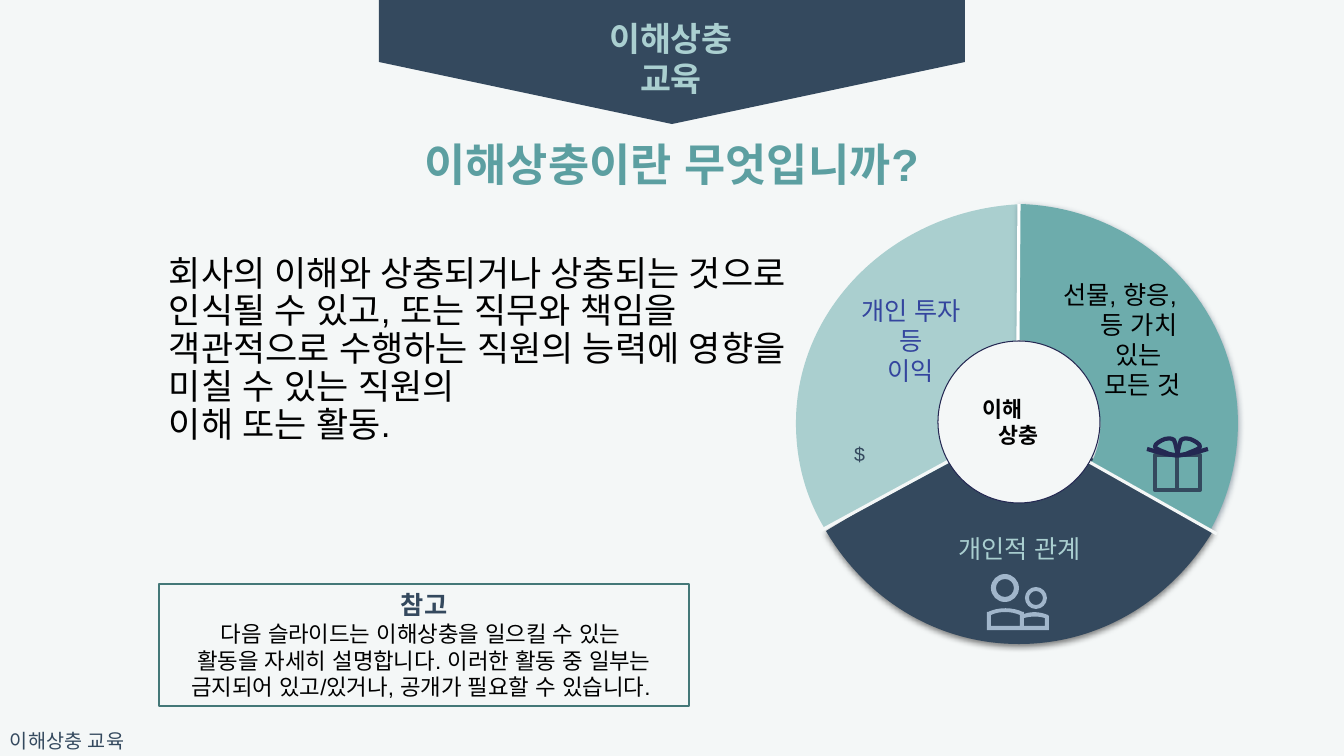
from pptx import Presentation, util as u
from pptx.dml.color import RGBColor
from pptx.enum import shapes, text
from pptx.oxml import parse_xml
from pptx.oxml.ns import nsdecls

PX = 914400 / 100.8
SIZE = (1344, 756)
PAPER, NAVY, TEAL, PALE, BLACK = "F4F7F7", "34495E", "5C9FA1", "AACFD0", "000000"
INDIGO, STEEL = "242852", "A1B6CB"
CENTER, LEFT = text.PP_ALIGN.CENTER, text.PP_ALIGN.LEFT
MIDDLE, TOP = text.MSO_ANCHOR.MIDDLE, text.MSO_ANCHOR.TOP
INSETS = (10, 5, 10, 5)

# Paragraph: (text, size, colour, bold)
BANNER = [("이해상충", 24, PALE, True), ("교육", 24, PALE, True)]
HEADING = [("이해상충이란 무엇입니까?", 32, TEAL, True)]
DEFINITION = [("회사의 이해와 상충되거나 상충되는 것으로 인식될 수 있고, 또는 직무와 책임을 "
               "객관적으로 수행하는 직원의 능력에 영향을 미칠 수 있는 직원의 \n이해 또는 활동.",
               25, BLACK, False)]
NOTE = [("참고", 18, NAVY, True),
        ("다음 슬라이드는 이해상충을 일으킬 수 있는 \n활동을 자세히 설명합니다. 이러한 활동 중 일부는 "
         "금지되어 있고/있거나, 공개가 필요할 수 있습니다. ", 16, BLACK, False)]
FOOTER = [("이해상충 교육", 14, NAVY, False)]
DOLLAR = [("$", 14, NAVY, False)]
HUB = [("이해", 15.5, BLACK, True), ("상충", 15.5, BLACK, True)]
RELATIONS = [("개인적 관계", 18, PALE, False)]
INVESTMENTS = [(line, 18, "34459E", False) for line in ("개인 투자", "등", "이익")]
GIFTS = [("선물, 향응, \n등 가치 \n있는 \n모든 것", 18, BLACK, False)]


def straight(*corners):
    """Corners as curve triples, so that straight edges join a chain of curves."""
    return [corner for corner in corners for _ in range(3)]


def circle(x, y, r):
    k = r * 0.55
    return [(x, y - r), (x + k, y - r), (x + r, y - k), (x + r, y),
            (x + r, y + k), (x + k, y + r), (x, y + r),
            (x - k, y + r), (x - r, y + k), (x - r, y),
            (x - r, y - k), (x - k, y - r), (x, y - r)]


# Curve chains: first point, then (control, control, end) triples
RELATIONS_EDGE = [
    (1042, 496), (1019, 502), (996, 499), (976, 487), (964, 480), (954, 470), (947, 458),
    *straight((826, 531)), (866, 599), (937, 644), (1019, 644),
    (1101, 644), (1172, 599), (1213, 531), *straight((1092, 458)),
    (1080, 476), (1062, 490), (1042, 496)]
INVESTMENTS_EDGE = [
    (954, 382), (966, 362), (985, 348), (1008, 342), (1015, 341), (1020, 340), (1026, 340),
    *straight((1026, 204)), (899, 207), (796, 304), (796, 423),
    (796, 462), (806, 498), (825, 529), *straight((951, 462)),
    (937, 436), (937, 407), (954, 382)]
GIFTS_EDGE = [
    (1097, 402), (1103, 422), (1101, 443), (1092, 462), *straight((1211, 529)),
    (1228, 498), (1238, 462), (1238, 423), (1238, 304), (1140, 207), (1019, 204),
    *straight((1019, 340)), (1032, 341), (1045, 344), (1056, 350),
    (1077, 362), (1092, 379), (1097, 402)]
# Ring sector: (edge, fill, shadow, insets, paragraphs)
SECTORS = [
    (RELATIONS_EDGE, NAVY, BLACK, (50, 75, 50, 5), RELATIONS),
    (INVESTMENTS_EDGE, "AACFCF", None, (20, 91, 20, 5), INVESTMENTS),
    (GIFTS_EDGE, "6DACAC", NAVY, (0, 75, 10, 0), GIFTS),
]
SPOKES = [((980, 444), (809, 537), PAPER), ((1084, 459), (1217, 534), PAPER),
          ((1019, 204), (1018, 342), "FFFFFF")]
BOW_SPAN = 1147 + 1208
BOW = [(1147, 449), (1151, 450), (1166, 455), (1173, 455), (1179, 456), (1181, 455),
       (1186, 454), (1190, 452), (1200, 449), (1200, 447), (1201, 444), (1193, 440),
       (1190, 439), (1187, 438), (1184, 438), (1181, 440), (1179, 444), (1178, 453), (1177, 455)]
PEOPLE = [
    circle(1005, 588, 9), circle(1005, 588, 14), circle(1036, 598, 7), circle(1036, 598, 11),
    [(1045, 626), *straight((1024, 626), (1024, 618)), (1031, 616), (1039, 616), (1045, 618),
     *straight((1045, 626))],
    [(1020, 626), *straight((991, 626), (991, 615)), (999, 611), (1011, 611), (1020, 615),
     *straight((1020, 626))],
    [(1048, 615), (1041, 612), (1032, 611), (1024, 614), *straight((1024, 612), (1023, 612)),
     (1013, 607), (998, 607), (988, 612),
     *straight((987, 612), (987, 630), (1049, 630), (1049, 616), (1048, 615))],
]

prs = Presentation()
prs.slide_width, prs.slide_height = (u.Emu(round(n * PX)) for n in SIZE)
slide = prs.slides.add_slide(prs.slide_layouts[6])


def px(*lengths):
    return [u.Emu(round(n * PX)) for n in lengths]


def rgb(value):
    return RGBColor.from_string(value)


def style(shape, fill=None, line=None, width=1):
    shape.shadow.inherit = False
    if fill:
        shape.fill.solid()
        shape.fill.fore_color.rgb = rgb(fill)
    else:
        shape.fill.background()
    if line:
        shape.line.color.rgb = rgb(line)
        shape.line.width = u.Pt(width)
    else:
        shape.line.fill.background()
    return shape


def write(shape, paragraphs, align=CENTER, anchor=TOP, insets=INSETS, spacing=None):
    frame = shape.text_frame
    frame.word_wrap = True
    frame.vertical_anchor = anchor
    (frame.margin_left, frame.margin_top,
     frame.margin_right, frame.margin_bottom) = px(*insets)
    for i, (words, size, color, bold) in enumerate(paragraphs):
        p = frame.paragraphs[0] if i == 0 else frame.add_paragraph()
        p.text = words
        p.alignment = align
        p.font.name, p.font.size, p.font.bold = "Arial", u.Pt(size), bold
        p.font.color.rgb = rgb(color)
        p._p.pPr.find("{*}defRPr").append(
            parse_xml(f'<a:ea {nsdecls("a")} typeface="Arial"/>'))
        if spacing:
            p.line_spacing = spacing
    return frame


def label(box, paragraphs, **options):
    return write(slide.shapes.add_textbox(*px(*box)), paragraphs, **options)


def preset(kind, box, **look):
    return style(slide.shapes.add_shape(kind, *px(*box)), **look)


def curved(*chains, close=True, **look):
    """One freeform of curve chains: each three line segments become one cubic curve."""
    tenths = [[(x * 10, y * 10) for x, y in chain] for chain in chains]
    builder = slide.shapes.build_freeform(*tenths[0][0], scale=PX / 10)
    for i, chain in enumerate(tenths):
        if i:
            builder.move_to(*chain[0])
        builder.add_line_segments(chain[1:], close=close)
    shape = builder.convert_to_shape()
    segments = list(shape._element.iter("{*}lnTo"))
    for i in range(0, len(segments), 3):
        curve = parse_xml(f"<a:cubicBezTo {nsdecls('a')}/>")
        segments[i].addprevious(curve)
        for segment in segments[i:i + 3]:
            curve.append(segment[0])
            segment.getparent().remove(segment)
    return style(shape, **look)


def line(start, end, color, width):
    link = slide.shapes.add_connector(shapes.MSO_CONNECTOR.STRAIGHT, *px(*start, *end))
    link.line.color.rgb = rgb(color)
    link.line.width = u.Pt(width)
    link._element.spPr.append(parse_xml(f"<a:effectLst {nsdecls('a')}/>"))


def drop_shadow(shape, color):
    effects = shape._element.spPr.find("{*}effectLst")
    effects.append(parse_xml(
        f'<a:outerShdw {nsdecls("a")} blurRad="{u.Pt(4.5)}" dist="{u.Pt(1.5)}" dir="5400000">'
        f'<a:srgbClr val="{color}"><a:alpha val="50000"/></a:srgbClr></a:outerShdw>'))


def indent(paragraph, **lengths):
    for name, length in lengths.items():
        paragraph._p.pPr.set(name, str(px(length)[0]))


background = slide.background.fill
background.solid()
background.fore_color.rgb = rgb(PAPER)

label((0, 724, 324, 34), FOOTER, align=LEFT)
preset(shapes.MSO_SHAPE.PENTAGON, (610, -231, 124, 586), fill=NAVY).rotation = 90
label((159, 251, 641, 232), DEFINITION, align=LEFT, spacing=0.9)
label((299, 13, 744, 92), BANNER)
heading = label((177, 122, 989, 75), HEADING, anchor=MIDDLE, insets=(10,) * 4, spacing=1.15)
heading.paragraphs[0].space_after = u.Pt(6)

for edge, fill, shadow, insets, words in SECTORS:
    sector = curved(edge, fill=fill)
    if shadow:
        drop_shadow(sector, shadow)
    sector_text = write(sector, words, insets=insets)
    if words is GIFTS:
        indent(sector_text.paragraphs[0], marL=38, indent=-38)

for start, end, color in SPOKES:
    line(start, end, color, 2.25)
hub = preset(shapes.MSO_SHAPE.OVAL, (938, 341, 162, 162), fill=PAPER, line=INDIGO, width=0.75)
hub_text = write(hub, HUB, anchor=MIDDLE, insets=(10,) * 4)
for paragraph, right in zip(hub_text.paragraphs, (32, 0)):
    indent(paragraph, marR=right)

preset(shapes.MSO_SHAPE.RECTANGLE, (1155, 455, 45, 35), line=NAVY, width=3)
line((1177, 445), (1177, 491), NAVY, 3)
for loop in (BOW, [(BOW_SPAN - x, y) for x, y in BOW]):
    curved(loop, close=False, line=INDIGO, width=3)
curved(*PEOPLE, fill=STEEL)

label((831, 437, 57, 48), DOLLAR)
write(preset(shapes.MSO_SHAPE.RECTANGLE, (159, 584, 530, 122), line="447878", width=1.5),
      NOTE, anchor=MIDDLE)

prs.save("out.pptx")
